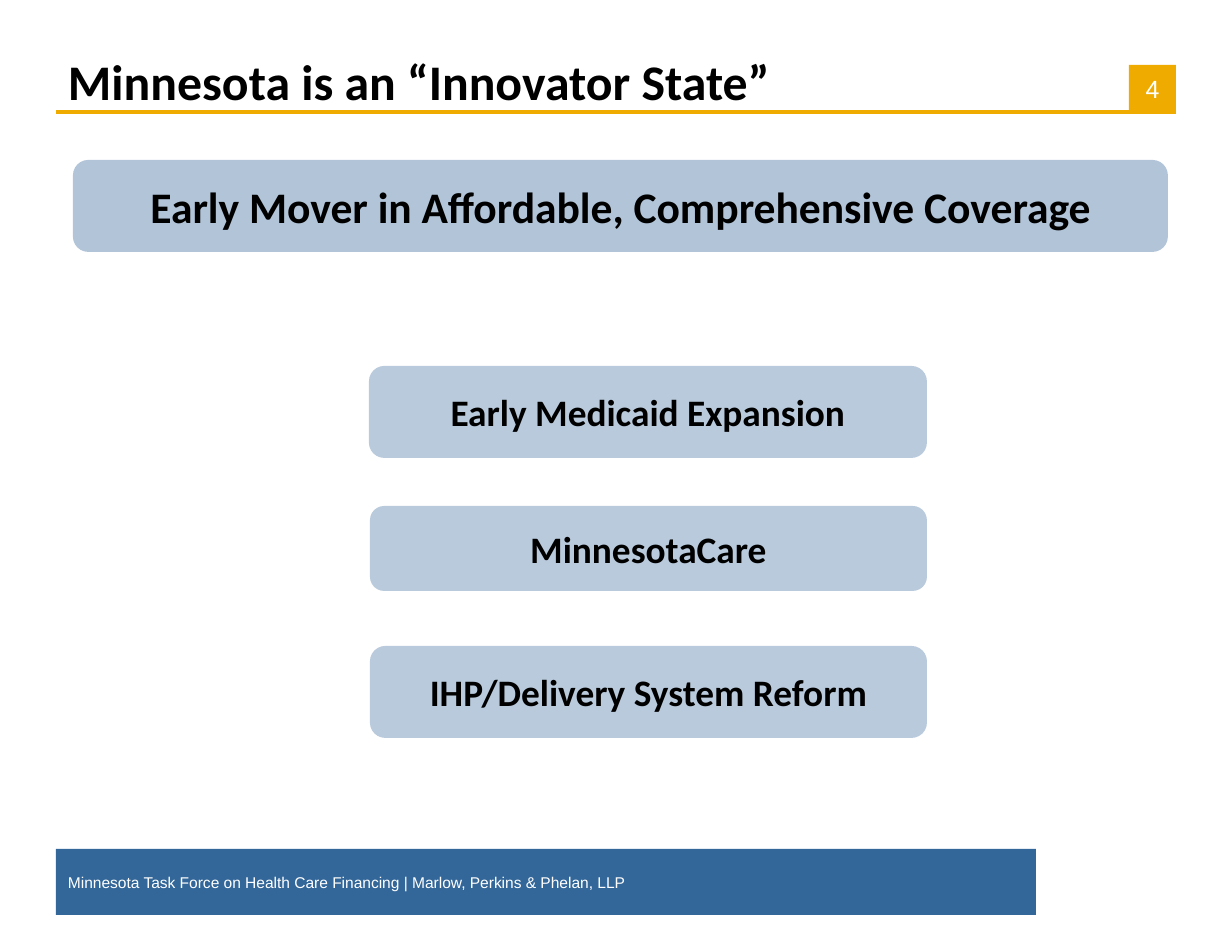
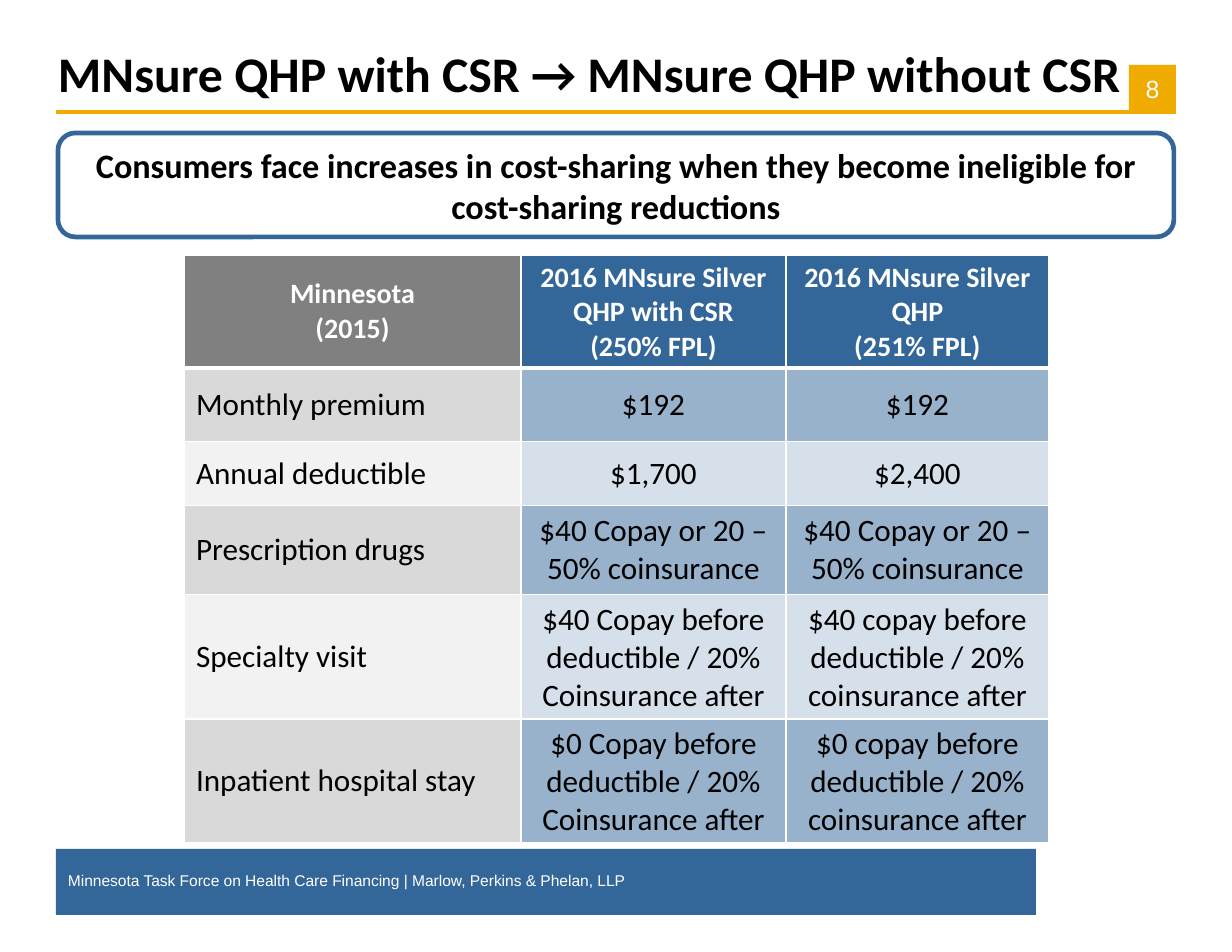
from lxml import etree
from pptx import Presentation
from pptx.dml.color import RGBColor
from pptx.enum.shapes import MSO_CONNECTOR as CONNECTOR, MSO_SHAPE as SHAPE
from pptx.enum.text import MSO_ANCHOR as ANCHOR, PP_ALIGN as ALIGN
from pptx.oxml.ns import qn
from pptx.util import Inches, Pt

PX = Inches(1) // 112
BLUE, GOLD, GRAY = "336699", "F0AB00", "808080"
BLACK, WHITE = "000000", "FFFFFF"
FOOTER = "Minnesota Task Force on Health Care Financing | Marlow, Perkins & Phelan, LLP"


def paint(fill, color, opacity=100):
    fill.solid()
    fill.fore_color.rgb = RGBColor.from_string(color)
    if opacity < 100:
        color_element = fill._xPr.find(qn("a:solidFill"))[0]
        etree.SubElement(color_element, qn("a:alpha"), val=str(opacity * 1000))


def write(frame, text, size, color=BLACK, bold=True, font="Calibri",
          align=ALIGN.CENTER, anchor=ANCHOR.MIDDLE, margins=(12, 6, 12, 6)):
    frame.word_wrap = True
    frame.vertical_anchor = anchor
    (frame.margin_left, frame.margin_top,
     frame.margin_right, frame.margin_bottom) = (margin * PX for margin in margins)
    frame.text = text
    for paragraph in frame.paragraphs:
        paragraph.alignment = align
        paragraph.font.size = Pt(size)
        paragraph.font.name = font
        paragraph.font.bold = bold
        paint(paragraph.font.fill, color)


presentation = Presentation()
presentation.slide_width, presentation.slide_height = Inches(11), Inches(8.5)

pages = [
    ("Minnesota is an “Innovator State”", "4", (56, 43, 1133, 73), 870),
    ("MNsure QHP with CSR → MNsure QHP without CSR", "8", (46, 36, 1109, 73), 868),
]
slides = []
for title, number, title_box, footer_top in pages:
    slide = presentation.slides.add_slide(presentation.slide_layouts[6])
    slides.append(slide)

    for box, color in [((56, 849, 980, 66), BLUE), ((1129, 65, 47, 47), GOLD)]:
        block = slide.shapes.add_shape(SHAPE.RECTANGLE, *(value * PX for value in box))
        block.shadow.inherit = False
        block.line.fill.background()
        paint(block.fill, color)
    write(block.text_frame, number, 16, WHITE, False, "Arial", margins=(0, 0, 0, 0))

    rule = slide.shapes.add_connector(
        CONNECTOR.STRAIGHT, 56 * PX, 112 * PX, 1176 * PX, 112 * PX)
    etree.SubElement(rule._element.spPr, qn("a:effectLst"))
    rule.line.width = Pt(2)
    paint(rule.line.fill, GOLD)

    title_shape = slide.shapes.add_textbox(*(value * PX for value in title_box))
    write(title_shape.text_frame, title, 32, align=ALIGN.LEFT, anchor=ANCHOR.BOTTOM)

    footer = slide.shapes.add_textbox(56 * PX, footer_top * PX, 793 * PX, 28 * PX)
    write(footer.text_frame, FOOTER, 10, WHITE, False, "Arial",
          ALIGN.LEFT, margins=(12, 0, 0, 0))
    footer.text_frame.paragraphs[0].line_spacing = 0.8

innovator_slide, cost_slide = slides

panels = [
    ("Early Mover in Affordable, Comprehensive Coverage", (73, 160, 1095, 92), 28, 38),
    ("Early Medicaid Expansion", (369, 366, 558, 92), 24, 34),
    ("MinnesotaCare", (370, 506, 557, 85), 24, 34),
    ("IHP/Delivery System Reform", (370, 646, 557, 92), 24, 34),
]
for text, box, size, opacity in panels:
    panel = innovator_slide.shapes.add_shape(
        SHAPE.ROUNDED_RECTANGLE, *(value * PX for value in box))
    panel.shadow.inherit = False
    panel.line.fill.background()
    paint(panel.fill, BLUE, opacity)
    write(panel.text_frame, text, size)

callout = cost_slide.shapes.add_shape(
    SHAPE.ROUNDED_RECTANGLE, 58 * PX, 133 * PX, 1116 * PX, 104 * PX)
callout.shadow.inherit = False
callout.fill.background()
callout.line.width = Pt(3)
paint(callout.line.fill, BLUE)
write(callout.text_frame,
      "Consumers face increases in cost-sharing when they become ineligible for "
      "cost-sharing reductions", 22)

rows = [
    ("Minnesota\n(2015)", "2016 MNsure Silver QHP with CSR\n(250% FPL)",
     "2016 MNsure Silver QHP\n(251% FPL)"),
    ("Monthly premium", "$192", "$192"),
    ("Annual deductible", "$1,700", "$2,400"),
    ("Prescription drugs", "$40 Copay or 20 – 50% coinsurance",
     "$40 Copay or 20 – 50% coinsurance"),
    ("Specialty visit", "$40 Copay before deductible / 20% Coinsurance after",
     "$40 copay before deductible / 20% coinsurance after"),
    ("Inpatient hospital stay", "$0 Copay before deductible / 20% Coinsurance after",
     "$0 copay before deductible / 20% coinsurance after"),
]
widths = [337, 265, 263]
heights = [112, 74, 64, 89, 124, 124]
table = cost_slide.shapes.add_table(
    len(rows), len(widths), 184 * PX, 255 * PX,
    sum(widths) * PX, sum(heights) * PX).table
for column, width in zip(table.columns, widths):
    column.width = width * PX
for row, height in zip(table.rows, heights):
    row.height = height * PX

for row_index, texts in enumerate(rows):
    header, odd = row_index == 0, row_index % 2 == 1
    for column_index, text in enumerate(texts):
        cell = table.cell(row_index, column_index)
        label = column_index == 0
        properties = cell._tc.get_or_add_tcPr()
        for side in ("lnL", "lnR", "lnT", "lnB"):
            thick = (header and side == "lnB") or (row_index == 1 and side == "lnT")
            border = etree.SubElement(
                properties, qn(f"a:{side}"), w=str(Pt(3 if thick else 1)))
            border_fill = etree.SubElement(border, qn("a:solidFill"))
            etree.SubElement(border_fill, qn("a:srgbClr"), val=WHITE)
        if header:
            paint(cell.fill, GRAY if label else BLUE)
        elif label:
            paint(cell.fill, "D9D9D9" if odd else "F2F2F2")
        else:
            paint(cell.fill, BLUE, 50 if odd else 20)
        write(cell.text_frame, text, 18 if header else 20,
              WHITE if header else BLACK, header,
              align=ALIGN.LEFT if label and not header else ALIGN.CENTER)
        cell.vertical_anchor = ANCHOR.MIDDLE
        cell.margin_left = cell.margin_right = 12 * PX
        cell.margin_top = cell.margin_bottom = 6 * PX

presentation.save("out.pptx")
